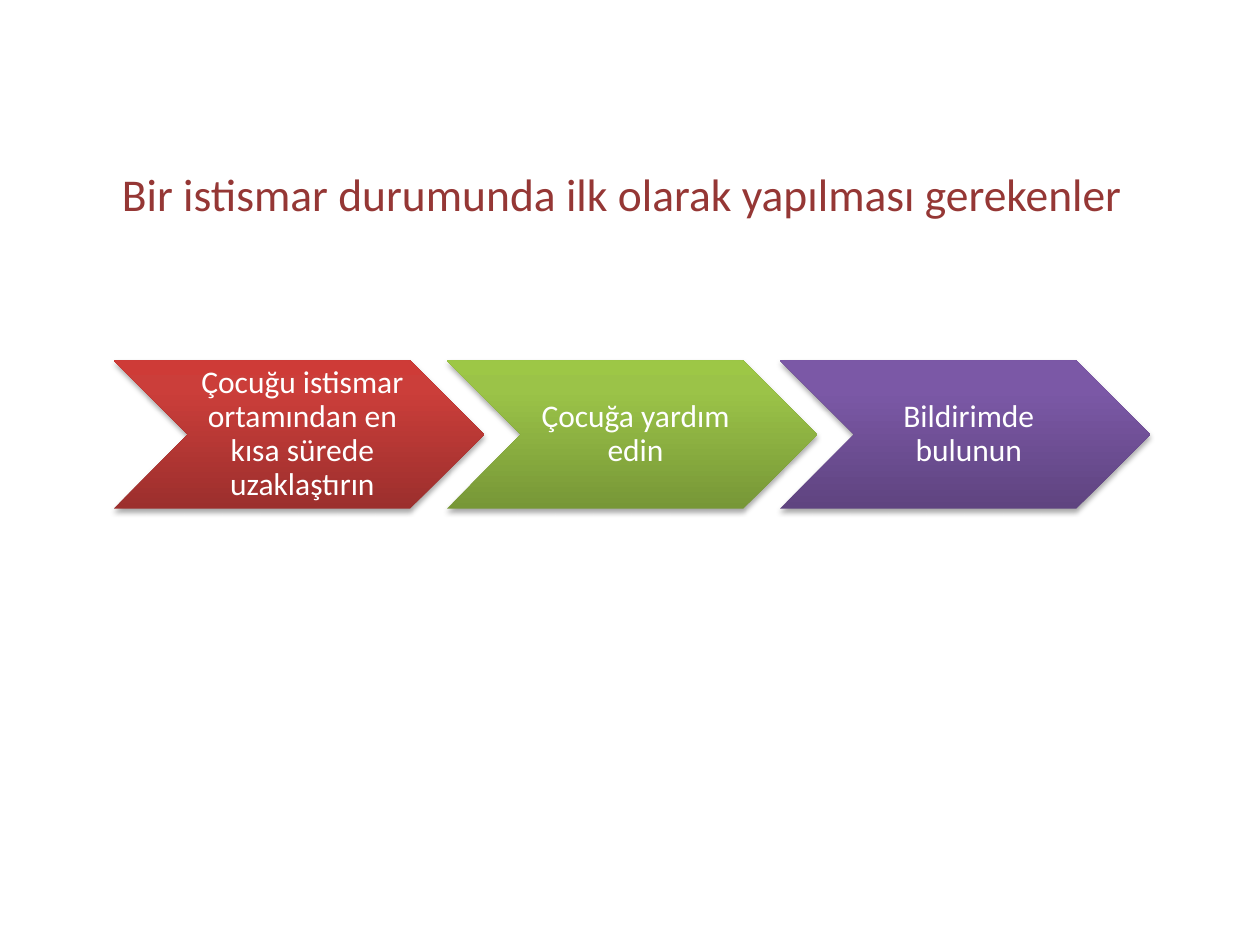
import copy

import lxml.etree
import pptx
import pptx.dml.color
import pptx.enum.shapes
import pptx.enum.text
import pptx.oxml
import pptx.oxml.ns
import pptx.util

Pt = pptx.util.Pt
RGB = pptx.dml.color.RGBColor
qn = pptx.oxml.ns.qn

FONT = "Calibri"
MAROON = RGB(0x95, 0x37, 0x35)
WHITE = RGB(0xFF, 0xFF, 0xFF)
REDS = RGB(0x9C, 0x2F, 0x2D), RGB(0xCB, 0x3E, 0x3A), RGB(0xCE, 0x3B, 0x37)
GREENS = RGB(0x77, 0x97, 0x37), RGB(0x9B, 0xC3, 0x48), RGB(0x9D, 0xC7, 0x46)
VIOLETS = RGB(0x5F, 0x44, 0x80), RGB(0x7B, 0x58, 0xA6), RGB(0x7C, 0x57, 0xA8)

TITLE = "Bir istismar durumunda ilk olarak yapılması gerekenler"
STEPS = [
    ("Çocuğu istismar ortamından en kısa sürede uzaklaştırın", REDS),
    ("Çocuğa yardım edin", GREENS),
    ("Bildirimde bulunun", VIOLETS),
]
STOPS = 0, 0.8, 1
LEFT, TOP, WIDTH, HEIGHT, PITCH = 65, 206, 211.6, 84.6, 190.4


def write(frame, text, size, color):
    frame.word_wrap = True
    frame.vertical_anchor = pptx.enum.text.MSO_ANCHOR.MIDDLE
    para = frame.paragraphs[0]
    para.alignment = pptx.enum.text.PP_ALIGN.CENTER
    run = para.add_run()
    run.text = text
    run.font.name = FONT
    run.font.size = Pt(size)
    run.font.color.rgb = color
    return para


def shade(shape, colors):
    fill = shape.fill
    fill.gradient()
    fill.gradient_angle = 90
    stops = shape.element.spPr.find(".//" + qn("a:gsLst"))
    stops.append(copy.deepcopy(stops[-1]))
    for stop, place, color in zip(fill.gradient_stops, STOPS, colors):
        stop.position = place
        stop.color.rgb = color


def shadow(shape):
    shape.shadow.inherit = False
    effects = shape.element.spPr.find(qn("a:effectLst"))
    outer = lxml.etree.SubElement(
        effects, qn("a:outerShdw"), blurRad=str(Pt(3.1)), dist=str(Pt(1.8)),
        dir="5400000", rotWithShape="0")
    tint = lxml.etree.SubElement(outer, qn("a:srgbClr"), val="000000")
    lxml.etree.SubElement(tint, qn("a:alpha"), val="35000")


def step(slide, index, text, colors):
    shape = slide.shapes.add_shape(
        pptx.enum.shapes.MSO_SHAPE.CHEVRON,
        Pt(LEFT + index * PITCH), Pt(TOP), Pt(WIDTH), Pt(HEIGHT))
    shade(shape, colors)
    shape.line.fill.background()
    shadow(shape)
    frame = shape.text_frame
    frame.margin_left = Pt(6)
    frame.margin_top = frame.margin_right = frame.margin_bottom = Pt(2)
    write(frame, text, 18, WHITE).line_spacing = 0.9


def main():
    deck = pptx.Presentation()
    deck.slide_width, deck.slide_height = Pt(720), Pt(540)
    slide = deck.slides.add_slide(deck.slide_layouts[5])
    title = slide.shapes.title
    title.left, title.top = Pt(59.8), Pt(88.6)
    title.width, title.height = Pt(591.8), Pt(43.2)
    write(title.text_frame, TITLE, 26, MAROON)
    for index, (text, colors) in enumerate(STEPS):
        step(slide, index, text, colors)
    deck.save("out.pptx")


if __name__ == "__main__":
    main()
